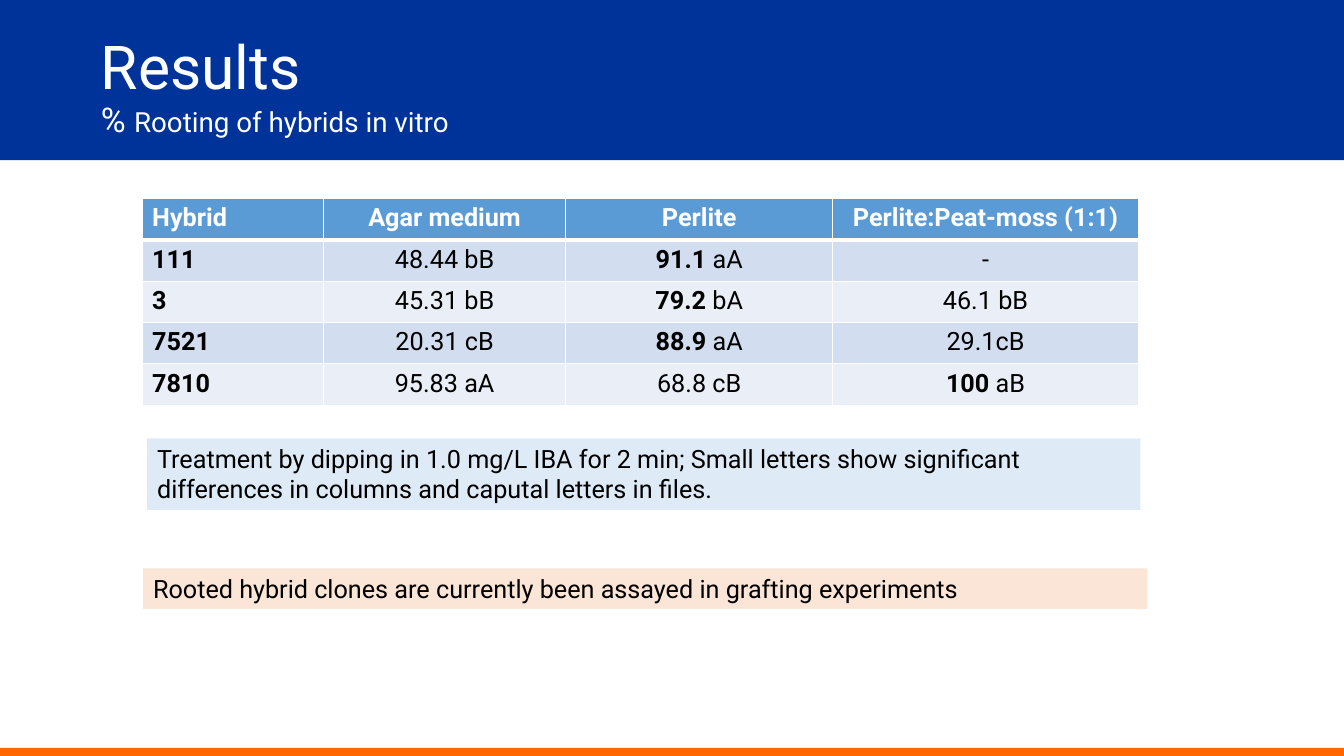
"""Build the slide with the rooting results of hybrids in vitro."""
from lxml import etree
from pptx import Presentation
from pptx.dml.color import RGBColor
from pptx.enum.shapes import MSO_SHAPE
from pptx.enum.text import MSO_ANCHOR, MSO_AUTO_SIZE, PP_ALIGN
from pptx.oxml.ns import qn
from pptx.util import Inches, Pt

RECT = MSO_SHAPE.RECTANGLE
TOP, MIDDLE = MSO_ANCHOR.TOP, MSO_ANCHOR.MIDDLE
LEFT, CENTER = PP_ALIGN.LEFT, PP_ALIGN.CENTER
NO_FIT = MSO_AUTO_SIZE.NONE

FONT = "Roboto"
COLORS = {
    "white": "FFFFFF", "black": "000000", "banner": "003399", "footer": "FF6600",
    "header": "5B9BD5", "odd": "D2DEEF", "even": "EAEFF7",
    "treatment": "DEEBF7", "grafting": "FBE5D6",
}
BARS = [("banner", (0, 0, 13.33, 1.59)), ("footer", (0, 7.42, 13.33, 0.08))]
TITLE_BOX = (0.9, 0.39, 10.2, 0.98)
TITLE = [("Results", 43.2), ("% ", 24.3), ("Rooting of hybrids in vitro", 19.8)]

TABLE_AT = (1.41, 1.97)
COL_WIDTHS = [1.8, 2.4, 2.65, 3.03]
ROW_HEIGHT = 0.41
ROWS = [
    [("Hybrid", ""), ("Agar medium", ""), ("Perlite", ""), ("Perlite:Peat-moss (1:1)", "")],
    [("111", ""), ("", "48.44 bB"), ("91.1", " aA"), ("", "-")],
    [("3", ""), ("", "45.31 bB"), ("79.2", " bA"), ("", "46.1 bB")],
    [("7521", ""), ("", "20.31 cB"), ("88.9", " aA"), ("", "29.1cB")],
    [("7810", ""), ("", "95.83 aA"), ("", "68.8 cB"), ("100 ", "aB")],
]
NOTES = [
    ("treatment", (1.46, 4.35, 9.85, 0.71),
     "Treatment by dipping in 1.0 mg/L IBA for 2 min; Small letters show significant "
     "differences in columns and caputal letters in files."),
    ("grafting", (1.42, 5.64, 9.96, 0.4),
     "Rooted hybrid clones are currently been assayed in grafting experiments"),
]


def rgb(name):
    return RGBColor.from_string(COLORS[name])


def add_run(p, text, size, color, bold=False):
    r = p.add_run()
    r.text = text
    for key, value in {"name": FONT, "size": Pt(size), "bold": bold}.items():
        setattr(r.font, key, value)
    r.font.color.rgb = rgb(color)


def add_rect(s, box, color):
    sp = s.shapes.add_shape(RECT, *map(Inches, box))
    sp.shadow.inherit = False
    sp.fill.solid()
    sp.fill.fore_color.rgb = rgb(color)
    sp.line.fill.background()
    return sp


def add_borders(cell, widths):
    tc_pr = cell._tc.get_or_add_tcPr()
    for i, (side, width) in enumerate(widths.items()):
        ln = etree.Element(qn(f"a:ln{side}"), w=str(Pt(width)))
        fill = etree.SubElement(ln, qn("a:solidFill"))
        etree.SubElement(fill, qn("a:srgbClr"), val=COLORS["white"])
        tc_pr.insert(i, ln)


def add_title(s):
    sp = s.shapes.title
    sp.left, sp.top, sp.width, sp.height = map(Inches, TITLE_BOX)
    tf = sp.text_frame
    tf.auto_size, tf.vertical_anchor = NO_FIT, MIDDLE
    p = tf.paragraphs[0]
    p.alignment, p.line_spacing = LEFT, 0.9
    for i, (text, size) in enumerate(TITLE):
        if i == 1:
            p.add_line_break()
        add_run(p, text, size, "white")


def add_results(s):
    size = (sum(COL_WIDTHS), ROW_HEIGHT * len(ROWS))
    table = s.shapes.add_table(len(ROWS), len(COL_WIDTHS),
                               *map(Inches, TABLE_AT + size)).table
    for col, width in zip(table.columns, COL_WIDTHS):
        col.width = Inches(width)
    for i, row in enumerate(ROWS):
        table.rows[i].height = Inches(ROW_HEIGHT)
        fill = "header" if i == 0 else "odd" if i % 2 else "even"
        for j, parts in enumerate(row):
            cell = table.cell(i, j)
            cell.fill.solid()
            cell.fill.fore_color.rgb = rgb(fill)
            add_borders(cell, {"L": 1, "R": 1, "T": 3 if i == 1 else 1, "B": 3 if i == 0 else 1})
            p = cell.text_frame.paragraphs[0]
            p.alignment = CENTER if j else LEFT
            for text, bold in zip(parts, (True, False)):
                if text:
                    add_run(p, text, 18, "black" if i else "white", bold)


def add_note(s, color, box, text):
    tf = add_rect(s, box, color).text_frame
    tf.word_wrap, tf.vertical_anchor = True, TOP
    p = tf.paragraphs[0]
    p.alignment = LEFT
    add_run(p, text, 18, "black")


def main():
    prs = Presentation()
    prs.slide_width, prs.slide_height = Inches(13.33), Inches(7.5)
    s = prs.slides.add_slide(prs.slide_layouts[5])
    for color, box in BARS:
        sp = add_rect(s, box, color)
        s.shapes.title.element.addprevious(sp.element)
    add_title(s)
    add_results(s)
    for note in NOTES:
        add_note(s, *note)
    prs.save("out.pptx")


if __name__ == "__main__":
    main()
